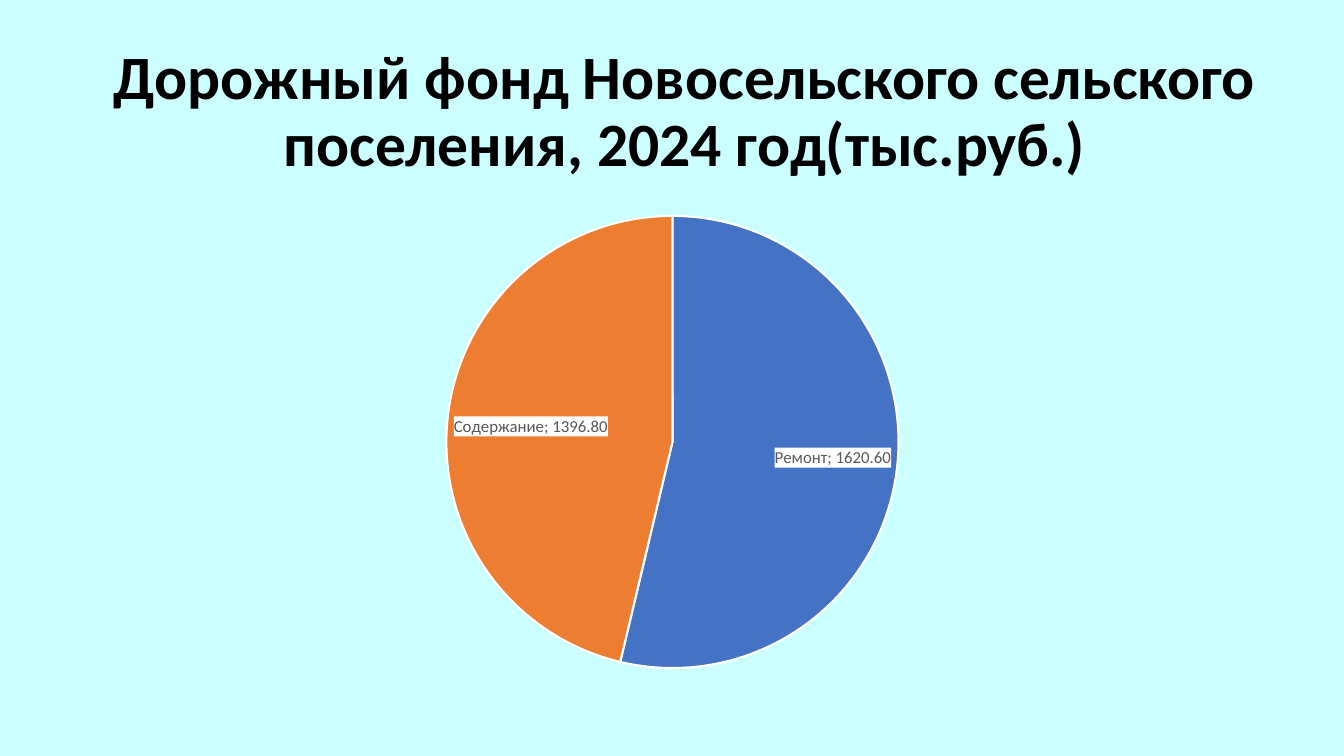
"""Build a slide with a pie chart of the road fund of a rural settlement."""
from pptx import Presentation, util as u
from pptx.chart import data as chart_data
from pptx.dml.color import RGBColor
from pptx.enum import chart as chart_enum, text
from pptx.oxml import parse_xml
from pptx.oxml.ns import nsdecls, qn

SCALE = 914400 / 100.8
FUND = {"Ремонт": (1620.6, "4472C4"), "Содержание": (1396.8, "ED7D31")}


def px(*lengths):
    return [u.Emu(round(length * SCALE)) for length in lengths]


def paint(fill, color):
    fill.solid()
    fill.fore_color.rgb = RGBColor.from_string(color)


deck = Presentation()
deck.slide_width, deck.slide_height = px(1344, 756)
page = deck.slides.add_slide(deck.slide_layouts[5])
paint(page.background.fill, "CCFFFF")

title = page.shapes.title
title.left, title.top, title.width, title.height = px(93, 40, 1184, 146)
paint(title.fill, "CCFFFF")
frame = title.text_frame
frame.text = "Дорожный фонд Новосельского сельского поселения, 2024 год(тыс.руб.)"
frame.word_wrap = True
frame.auto_size = text.MSO_AUTO_SIZE.NONE
frame.vertical_anchor = text.MSO_ANCHOR.MIDDLE
para = frame.paragraphs[0]
para.alignment = text.PP_ALIGN.CENTER
para.line_spacing = 0.9
span = para.runs[0]
for name, value in {"name": "Calibri", "size": u.Pt(44), "bold": True}.items():
    setattr(span.font, name, value)
paint(span.font.fill, "000000")

values = chart_data.CategoryChartData(number_format="0.00")
values.categories = list(FUND)
values.add_series("Дорожный фонд", [amount for amount, color in FUND.values()])
pie = page.shapes.add_chart(
    chart_enum.XL_CHART_TYPE.PIE, *px(93, 202, 1159, 480), values
).chart
pie.has_title = False
pie.has_legend = False
pie.font.name = "Calibri"
pie.font.size = u.Pt(10)
plot = pie.plots[0]
plot.vary_by_categories = True
series = plot.series[0]
for index, (amount, color) in enumerate(FUND.values()):
    slice_format = series.points[index].format
    paint(slice_format.fill, color)
    paint(slice_format.line.fill, "FFFFFF")
    slice_format.line.width = u.Pt(1.5)

labels = series.data_labels
label_format = {
    "show_value": True,
    "show_category_name": True,
    "number_format": "0.00",
    "number_format_is_linked": False,
    "position": chart_enum.XL_LABEL_POSITION.INSIDE_END,
}
for name, value in label_format.items():
    setattr(labels, name, value)
labels.font.name = "Calibri"
labels.font.size = u.Pt(12)
paint(labels.font.fill, "595959")
label_xml = labels._element
label_xml.find(qn("c:numFmt")).addnext(parse_xml(
    f'<c:spPr {nsdecls("c", "a")}><a:solidFill><a:srgbClr val="FFFFFF"/>'
    "</a:solidFill></c:spPr>"
))
label_xml.find(qn("c:showBubbleSize")).addnext(parse_xml(
    f'<c:separator {nsdecls("c")}>; </c:separator>'
))

deck.save("out.pptx")
